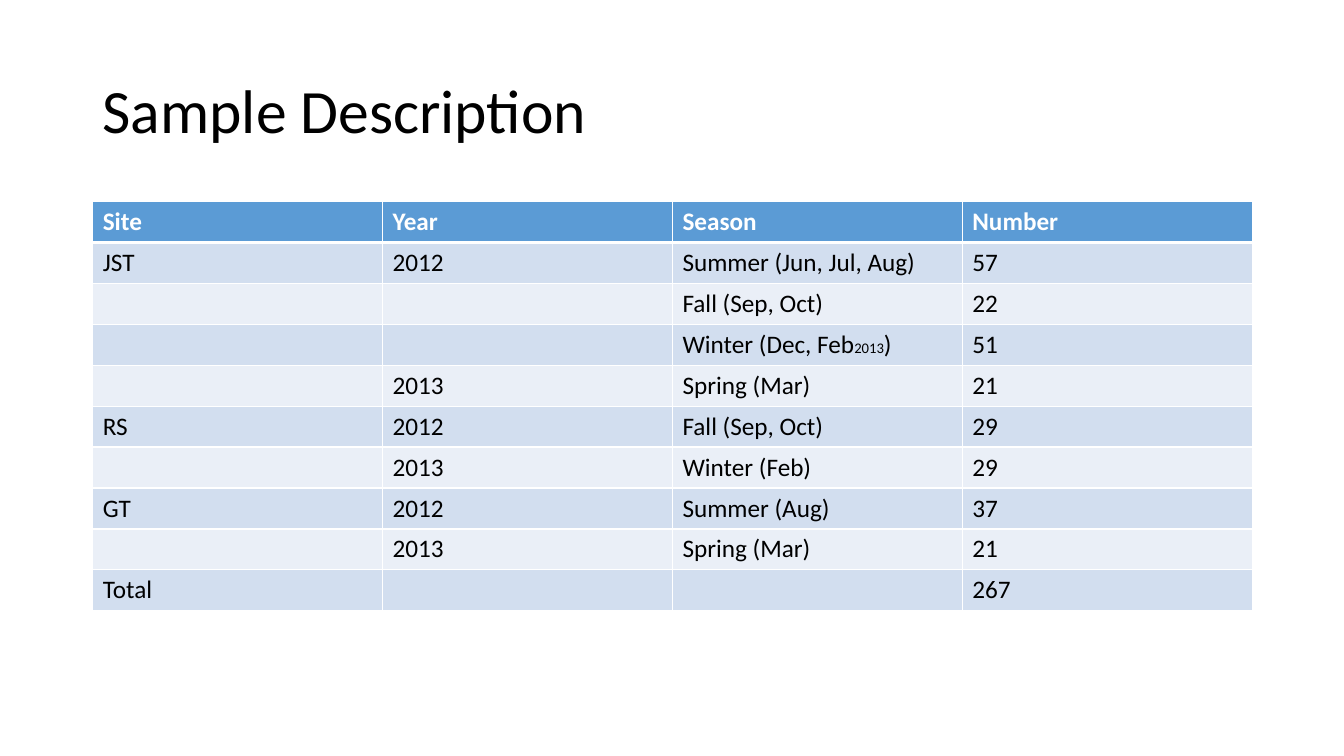
"""Build the sample description slide with its table of sites and seasons."""
from lxml.etree import SubElement
from pptx import Presentation
from pptx.dml.color import RGBColor
from pptx.enum.text import MSO_ANCHOR
from pptx.oxml.ns import qn
from pptx.util import Inches, Pt


def style(run, size, color, bold=False):
    font = run.font
    font.name, font.size, font.bold = "Calibri", Pt(size), bold
    font.color.rgb = RGBColor.from_string(color)


def border(cell, side, width):
    line = SubElement(cell._tc.get_or_add_tcPr(), qn(f"a:ln{side}"), w=str(Pt(width)))
    fill = SubElement(line, qn("a:solidFill"))
    SubElement(fill, qn("a:srgbClr"), val="FFFFFF")


rows = [
    ["Site", "Year", "Season", "Number"],
    ["JST", "2012", "Summer (Jun, Jul, Aug)", "57"],
    ["", "", "Fall (Sep, Oct)", "22"],
    ["", "", "Winter (Dec, Feb", "51"],
    ["", "2013", "Spring (Mar)", "21"],
    ["RS", "2012", "Fall (Sep, Oct)", "29"],
    ["", "2013", "Winter (Feb)", "29"],
    ["GT", "2012", "Summer (Aug)", "37"],
    ["", "2013", "Spring (Mar)", "21"],
    ["Total", "", "", "267"],
]

deck = Presentation()
deck.slide_width, deck.slide_height = Inches(13.33), Inches(7.5)
slide = deck.slides.add_slide(deck.slide_layouts[6])

title = slide.shapes.add_textbox(Inches(0.92), Inches(0.4), Inches(11.5), Inches(1.45))
frame = title.text_frame
frame.word_wrap = True
frame.vertical_anchor = MSO_ANCHOR.MIDDLE
frame.text = "Sample Description"
frame.paragraphs[0].line_spacing = 0.9
style(frame.paragraphs[0].runs[0], 44, "000000")

table = slide.shapes.add_table(
    len(rows), 4, Inches(0.92), Inches(2), Inches(11.5), Inches(4.06)
).table

for r, row in enumerate(rows):
    head = r == 0
    shade = "5B9BD5" if head else "D2DEEF" if r % 2 else "EAEFF7"
    for c, text in enumerate(row):
        cell = table.cell(r, c)
        for side in "LRTB":
            thick = (side == "B" and head) or (side == "T" and r == 1)
            border(cell, side, 3 if thick else 1)
        cell.fill.solid()
        cell.fill.fore_color.rgb = RGBColor.from_string(shade)
        cell.text_frame.text = text
        for run in cell.text_frame.paragraphs[0].runs:
            style(run, 18, "FFFFFF" if head else "000000", head)

winter = table.cell(3, 2).text_frame.paragraphs[0]
for text, size in [("2013", 10.5), (")", 18)]:
    run = winter.add_run()
    run.text = text
    style(run, size, "000000")

deck.save("out.pptx")
